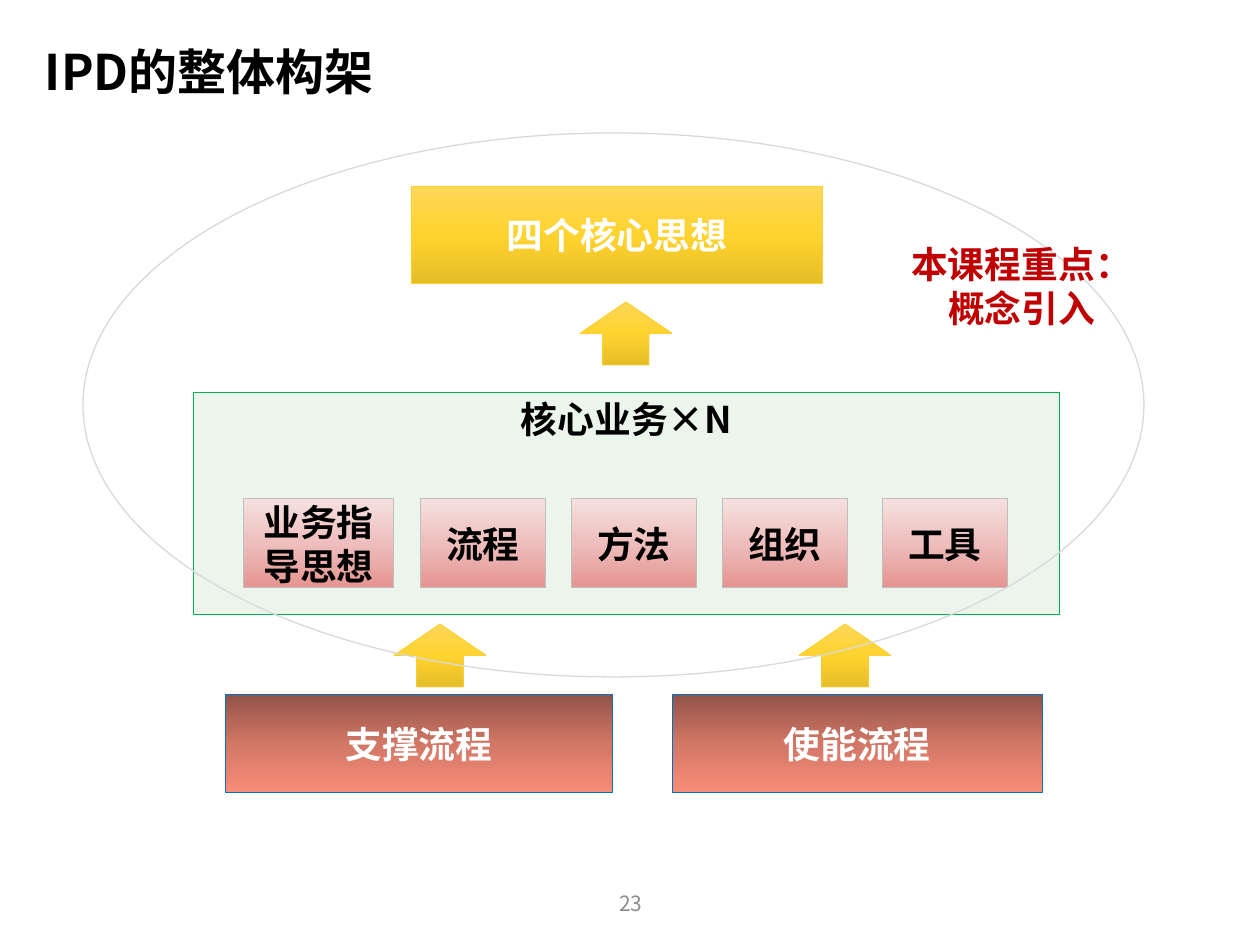
from copy import deepcopy
from dataclasses import dataclass

from lxml import etree
from pptx import Presentation
from pptx import util as u
from pptx.dml.color import RGBColor
from pptx.enum import lang, shapes, text
from pptx.oxml.ns import qn

PX_PER_INCH = 126
FONT = "Noto Sans CJK SC"
RECT = shapes.MSO_SHAPE.RECTANGLE
ARROW = shapes.MSO_SHAPE.UP_ARROW
OVAL = shapes.MSO_SHAPE.OVAL
TOP, MIDDLE = text.MSO_ANCHOR.TOP, text.MSO_ANCHOR.MIDDLE
LEFT, CENTER = text.PP_ALIGN.LEFT, text.PP_ALIGN.CENTER


@dataclass(frozen=True)
class Look:
    fills: tuple[str, ...]
    line: str
    ink: str = "000000"
    line_width: float = 0.5
    opacity: int = 100


@dataclass(frozen=True)
class Area:
    left: int
    top: int
    width: int
    height: int


@dataclass(frozen=True)
class Label:
    lines: tuple[str, ...]
    ink: str
    size: int = 21
    bold: bool = True
    align: text.PP_ALIGN = CENTER
    anchor: text.MSO_ANCHOR = MIDDLE
    spacing: float = 1.0


GOLD = Look(("FED758", "FFD32F", "E5BD27"), "FBD133", "FFFFFF")
RED = Look(("935348", "D27766", "F98D79"), "0070C0", "FFFFFF")
PINK = Look(("F5E0DF", "EDBEBD", "E59490"), "BFBFBF")
GREEN = Look(("CFE8D0",), "00B050", opacity=40)
OUTLINE = Look((), "D9D9D9", line_width=0.75)


def px(length: int) -> u.Emu:
    return u.Emu(round(length * u.Inches(1) / PX_PER_INCH))


def frame(area: Area) -> tuple[u.Emu, ...]:
    return px(area.left), px(area.top), px(area.width), px(area.height)


def rgb(value: str) -> RGBColor:
    return RGBColor.from_string(value)


def write(box, label: Label) -> None:
    body = box.text_frame
    body.word_wrap = True
    body.vertical_anchor = label.anchor
    body.margin_left = body.margin_right = px(11)
    body.margin_top = body.margin_bottom = px(5)
    for index, line in enumerate(label.lines):
        para = body.add_paragraph() if index else body.paragraphs[0]
        para.alignment = label.align
        para.line_spacing = label.spacing
        span = para.add_run()
        span.text = line
        font = span.font
        font.name, font.size, font.bold = FONT, u.Pt(label.size), label.bold
        font.color.rgb = rgb(label.ink)
        font.language_id = lang.MSO_LANGUAGE_ID.SIMPLIFIED_CHINESE
        latin = font._element.find(qn("a:latin"))
        latin.addnext(etree.Element(qn("a:ea"), typeface=FONT))


def paint(shape, look: Look) -> None:
    """Fill a shape with nothing, one colour, or a gradient from top to bottom."""
    fill = shape.fill
    if not look.fills:
        fill.background()
    elif len(look.fills) == 1:
        fill.solid()
        fill.fore_color.rgb = rgb(look.fills[0])
        colour = shape.element.spPr.find(qn("a:solidFill"))[0]
        etree.SubElement(colour, qn("a:alpha"), val=str(look.opacity * 1000))
    else:
        fill.gradient()
        fill.gradient_angle = 270
        stops = shape.element.spPr.find(f".//{qn('a:gsLst')}")
        stops.append(deepcopy(stops[-1]))
        for index, stop in enumerate(fill.gradient_stops):
            stop.position = index / (len(look.fills) - 1)
            stop.color.rgb = rgb(look.fills[index])


def draw(page, kind: shapes.MSO_SHAPE, area: Area, look: Look,
         words: str = "", anchor: text.MSO_ANCHOR = MIDDLE) -> None:
    shape = page.shapes.add_shape(kind, *frame(area))
    shape.shadow.inherit = False
    paint(shape, look)
    shape.line.color.rgb = rgb(look.line)
    shape.line.width = u.Pt(look.line_width)
    if words:
        write(shape, Label((words,), look.ink, anchor=anchor))


def add_text(page, area: Area, label: Label) -> None:
    write(page.shapes.add_textbox(*frame(area)), label)


def main() -> None:
    deck = Presentation()
    deck.slide_width, deck.slide_height = u.Inches(10), u.Inches(7.5)
    page = deck.slides.add_slide(deck.slide_layouts[6])

    add_text(page, Area(489, 878, 284, 50),
             Label(("23",), "8C8C8C", size=12, bold=False))
    add_text(page, Area(34, 35, 1152, 79),
             Label(("IPD的整体构架",), "000000", size=28, align=LEFT, spacing=0.9))

    draw(page, RECT, Area(411, 186, 412, 98), GOLD, "四个核心思想")
    draw(page, RECT, Area(193, 392, 867, 223), GREEN, "核心业务×N", TOP)

    elements = (("业务指导思想", 243, 151), ("流程", 420, 126), ("方法", 571, 126),
                ("组织", 722, 126), ("工具", 882, 126))
    for words, left, width in elements:
        draw(page, RECT, Area(left, 499, width, 89), PINK, words)

    for words, left, width in (("支撑流程", 225, 388), ("使能流程", 672, 370)):
        draw(page, RECT, Area(left, 695, width, 98), RED, words)

    for left, top in ((580, 302), (394, 624), (799, 624)):
        draw(page, ARROW, Area(left, top, 92, 63), GOLD)

    draw(page, OVAL, Area(83, 133, 1061, 544), OUTLINE)
    add_text(page, Area(899, 241, 245, 89),
             Label(("本课程重点：", "概念引入"), "C00000"))

    deck.save("out.pptx")


if __name__ == "__main__":
    main()
